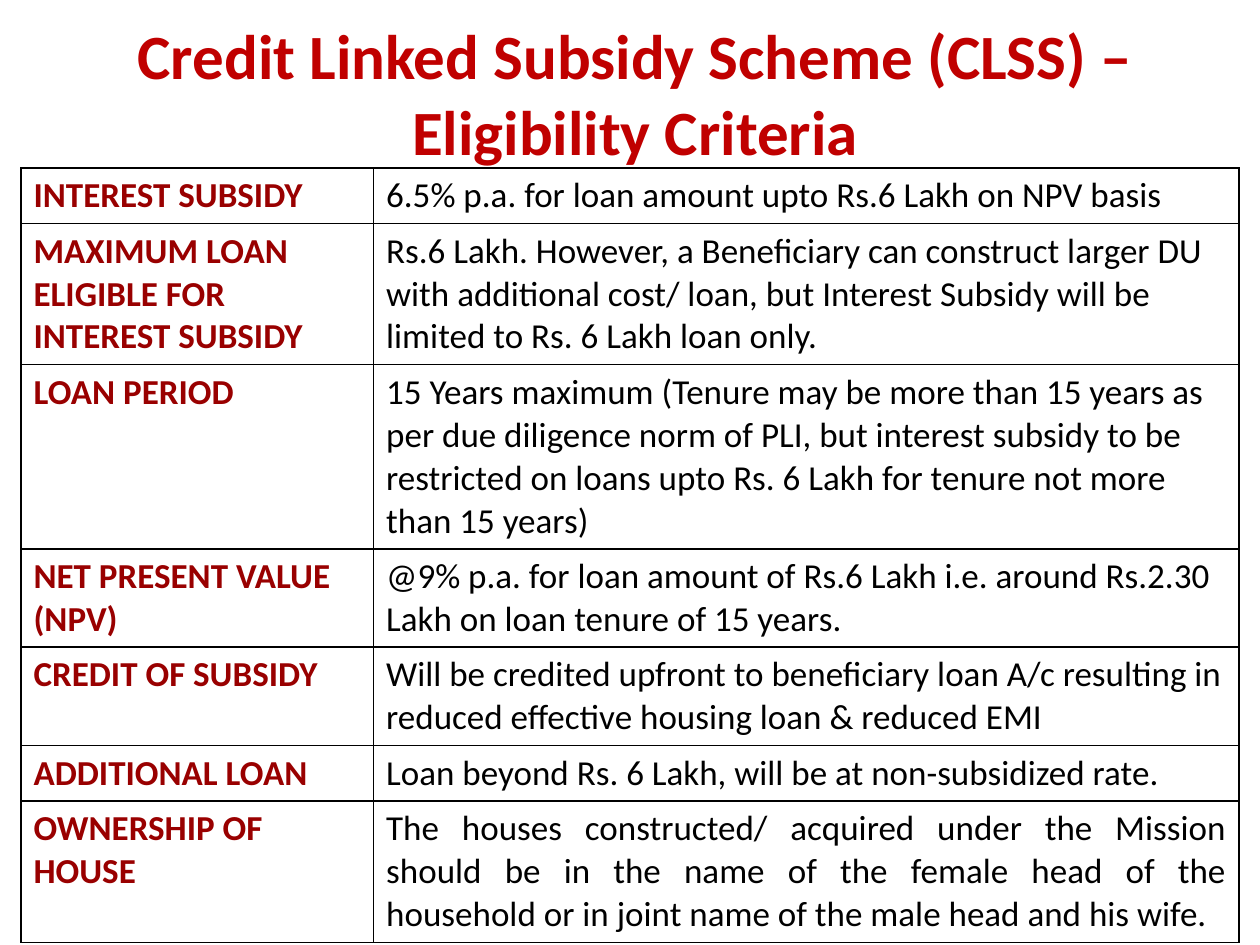
from lxml import etree
from pptx import Presentation
from pptx.dml.color import RGBColor
from pptx.enum import text as t
from pptx.oxml import ns
from pptx.util import Pt

HUES = {"title": "C00000", "label": "990000", "body": "000000", "rule": "000000"}
LEFT, JUST = t.PP_ALIGN.LEFT, t.PP_ALIGN.JUSTIFY
LINE, PAD = 24.1, 7  # height of a text line, and of a cell's margins

# label, terms, lines of text, alignment of the terms
ROWS = [
    ("INTEREST SUBSIDY",
     "6.5% p.a. for loan amount upto Rs.6 Lakh on NPV basis", 1, LEFT),
    ("MAXIMUM LOAN ELIGIBLE FOR INTEREST SUBSIDY",
     "Rs.6 Lakh. However, a Beneficiary can construct larger DU with additional "
     "cost/ loan, but Interest Subsidy will be limited to Rs. 6 Lakh loan only.", 3, LEFT),
    ("LOAN PERIOD",
     "15 Years maximum (Tenure may be more than 15 years as per due diligence norm "
     "of PLI, but interest subsidy to be restricted on loans upto Rs. 6 Lakh for "
     "tenure not more than 15 years)", 4, LEFT),
    ("NET PRESENT VALUE (NPV)",
     "@9% p.a. for loan amount of Rs.6 Lakh i.e. around Rs.2.30 Lakh on loan "
     "tenure of 15 years.", 2, LEFT),
    ("CREDIT OF SUBSIDY",
     "Will be credited upfront to beneficiary loan A/c resulting in reduced "
     "effective housing loan & reduced EMI", 2, LEFT),
    ("ADDITIONAL LOAN",
     "Loan beyond Rs. 6 Lakh, will be at non-subsidized rate.", 1, JUST),
    ("OWNERSHIP OF HOUSE",
     "The houses constructed/ acquired under the Mission should be in the name of "
     "the female head of the household or in joint name of the male head and his wife. ",
     3, JUST),
]


def write(frame, words, hue, size, bold, align):
    frame.word_wrap = True
    para = frame.paragraphs[0]
    para.alignment = align
    run = para.add_run()
    run.text = words
    for key, val in {"name": "Calibri", "size": Pt(size), "bold": bold}.items():
        setattr(run.font, key, val)
    run.font.color.rgb = RGBColor.from_string(HUES[hue])


def rule(cell):
    """Draw a one-point line on each side of a cell and clear its fill."""
    props = cell._tc.get_or_add_tcPr()
    for side in ("lnL", "lnR", "lnT", "lnB"):
        line = etree.SubElement(props, ns.qn(f"a:{side}"), w=str(Pt(1)))
        fill = etree.SubElement(line, ns.qn("a:solidFill"))
        etree.SubElement(fill, ns.qn("a:srgbClr"), val=HUES["rule"])
    cell.fill.background()


def add_title(slide, left, top, width, height):
    box = slide.shapes.add_textbox(Pt(left), Pt(top), Pt(width), Pt(height))
    write(box.text_frame, "Credit Linked Subsidy Scheme (CLSS) – Eligibility Criteria",
          "title", 36, True, t.PP_ALIGN.CENTER)


def add_terms(slide, left, top, width, split):
    """Place the criteria table; split is the width of the label column."""
    high = sum(LINE * row[2] + PAD for row in ROWS)
    grid = slide.shapes.add_table(len(ROWS), 2, Pt(left), Pt(top),
                                  Pt(width), Pt(high)).table
    grid.first_row = grid.horz_banding = False
    for col, wide in zip(grid.columns, (split, width - split)):
        col.width = Pt(wide)
    for row, (label, terms, lines, align) in zip(grid.rows, ROWS):
        row.height = Pt(LINE * lines + PAD)
        head, body = row.cells
        write(head.text_frame, label, "label", 20, True, LEFT)
        write(body.text_frame, terms, "body", 20, False, align)
        for cell in (head, body):
            rule(cell)


def main():
    deck = Presentation()
    deck.slide_width, deck.slide_height = Pt(720), Pt(540)
    slide = deck.slides.add_slide(deck.slide_layouts[6])
    add_terms(slide, 12, 96, 696, 201.5)
    add_title(slide, 41, 6, 644, 46)
    deck.save("out.pptx")


if __name__ == "__main__":
    main()
